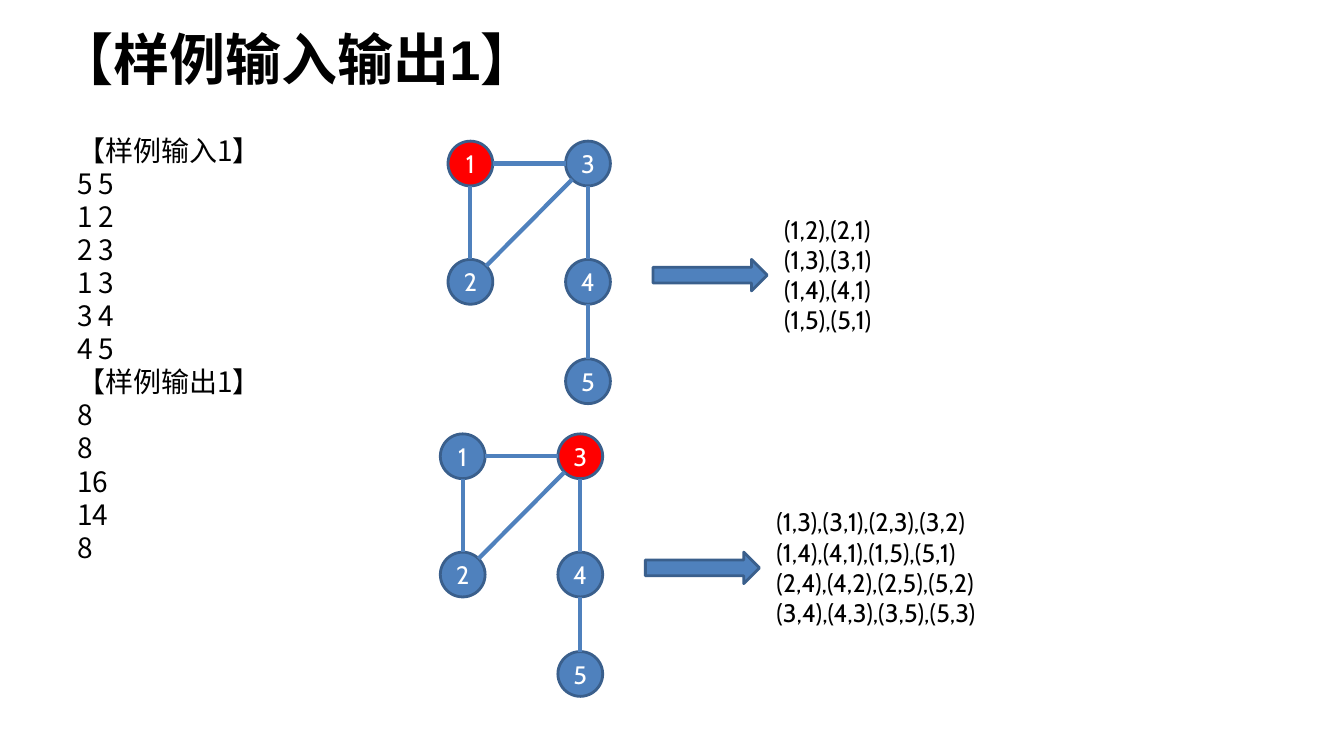
from dataclasses import dataclass
from math import hypot

from lxml.etree import SubElement
from pptx import Presentation
from pptx.dml.color import RGBColor
from pptx.enum.shapes import MSO_CONNECTOR, MSO_SHAPE
from pptx.enum.text import MSO_ANCHOR, MSO_AUTO_SIZE, PP_ALIGN
from pptx.oxml.ns import qn
from pptx.util import Pt


@dataclass(frozen=True)
class Theme:
    black: RGBColor = RGBColor(0, 0, 0)
    white: RGBColor = RGBColor(255, 255, 255)
    blue: RGBColor = RGBColor(0x4F, 0x81, 0xBD)
    outline: RGBColor = RGBColor(0x3A, 0x5F, 0x8C)
    red: RGBColor = RGBColor(255, 0, 0)
    title_font: str = "Arial"
    cjk_font: str = "Noto Sans CJK SC"
    label_font: str = "Cabin"
    title_size: int = 40
    body_size: int = 20
    label_size: int = 18


T = Theme()
SAMPLE = ["【样例输入1】", "5 5", "1 2", "2 3", "1 3", "3 4", "4 5",
          "【样例输出1】", "8", "8", "16", "14", "8"]

# Node positions and edges of the sample graph, relative to its box
NODE = 32
COL, ROW, LAST_ROW = 84, 84.5, 155.5
NODES = {1: (0, 0), 2: (0, ROW), 3: (COL, 0), 4: (COL, ROW), 5: (COL, LAST_ROW)}
EDGES = [(1, 3), (1, 2), (3, 4), (3, 2), (4, 5)]

# Left, top, marked node, pairs and pair box width of each graph
GRAPHS = [
    (320, 100.8, 1, ["(1,2),(2,1)", "(1,3),(3,1)", "(1,4),(4,1)", "(1,5),(5,1)"], 110),
    (314.5, 309.9, 3, ["(1,3),(3,1),(2,3),(3,2)\n(1,4),(4,1),(1,5),(5,1)",
                       "(2,4),(4,2),(2,5),(5,2)", "(3,4),(4,3),(3,5),(5,3)"], 304),
]


def add_run(p, text, font, size, color, bold=False):
    r = p.add_run()
    r.text = text
    r.font.name, r.font.size, r.font.bold = font, Pt(size), bold
    r.font.color.rgb = color
    SubElement(r.font._element, qn("a:ea"), typeface=T.cjk_font)


def add_lines(tf, lines, font, size, spacing=1.0, before=0):
    for i, line in enumerate(lines):
        p = tf.paragraphs[0] if i == 0 else tf.add_paragraph()
        p.line_spacing = spacing
        p.space_before = Pt(before if i else 0)
        for j, part in enumerate(line.split("\n")):
            if j:
                p.add_line_break()
            add_run(p, part, font, size, T.black)


def add_filled(s, kind, x, y, w, h, color):
    sp = s.shapes.add_shape(kind, Pt(x), Pt(y), Pt(w), Pt(h))
    sp.shadow.inherit = False
    sp.fill.solid()
    sp.fill.fore_color.rgb = color
    sp.line.color.rgb = T.outline
    sp.line.width = Pt(2)
    return sp


def add_title(s, x, y, w, h):
    sp = s.shapes.title
    sp.left, sp.top, sp.width, sp.height = Pt(x), Pt(y), Pt(w), Pt(h)
    tf = sp.text_frame
    tf.vertical_anchor = MSO_ANCHOR.MIDDLE
    p = tf.paragraphs[0]
    p.alignment = PP_ALIGN.LEFT
    add_run(p, "【样例输入输出1】", T.title_font, T.title_size, T.black, bold=True)


def add_sample(s, x, y, w, h):
    tf = s.shapes.add_textbox(Pt(x), Pt(y), Pt(w), Pt(h)).text_frame
    tf.word_wrap = True
    add_lines(tf, SAMPLE, T.cjk_font, T.body_size, spacing=0.9, before=2)


def add_node(s, x, y, number, color):
    sp = add_filled(s, MSO_SHAPE.OVAL, x, y, NODE, NODE, color)
    tf = sp.text_frame
    tf.word_wrap = False
    tf.vertical_anchor = MSO_ANCHOR.MIDDLE
    p = tf.paragraphs[0]
    p.alignment = PP_ALIGN.CENTER
    add_run(p, str(number), T.label_font, T.label_size, T.white)


def add_edge(s, x, y, start, end):
    # The line runs between the rims of the two circles
    (x1, y1), (x2, y2) = NODES[start], NODES[end]
    length = hypot(x2 - x1, y2 - y1)
    r = NODE / 2
    dx, dy = r * (x2 - x1) / length, r * (y2 - y1) / length
    line = s.shapes.add_connector(
        MSO_CONNECTOR.STRAIGHT, Pt(x + x1 + r + dx), Pt(y + y1 + r + dy),
        Pt(x + x2 + r - dx), Pt(y + y2 + r - dy))
    line.line.color.rgb = T.blue
    line.line.width = Pt(3)
    SubElement(line._element.spPr, qn("a:effectLst"))


def add_graph(s, x, y, marked, pairs, pairs_width):
    # Nodes and edges
    for number, (dx, dy) in NODES.items():
        add_node(s, x + dx, y + dy, number, T.red if number == marked else T.blue)
    for start, end in EDGES:
        add_edge(s, x, y, start, end)
    # Arrow to the resulting pairs
    add_filled(s, MSO_SHAPE.RIGHT_ARROW, x + 146.5, y + ROW, 81.5, 22.5, T.blue)
    box = s.shapes.add_textbox(Pt(x + 233), Pt(y + 48.5), Pt(pairs_width), Pt(94.5))
    tf = box.text_frame
    tf.word_wrap = True
    tf.auto_size = MSO_AUTO_SIZE.SHAPE_TO_FIT_TEXT
    add_lines(tf, pairs, T.label_font, T.label_size)


def main():
    prs = Presentation()
    prs.slide_width, prs.slide_height = Pt(960), Pt(540)
    s = prs.slides.add_slide(prs.slide_layouts[5])
    add_title(s, 34, 8, 893, 67.5)
    add_sample(s, 48, 94.5, 214.5, 396)
    for graph in GRAPHS:
        add_graph(s, *graph)
    prs.save("out.pptx")


if __name__ == "__main__":
    main()
